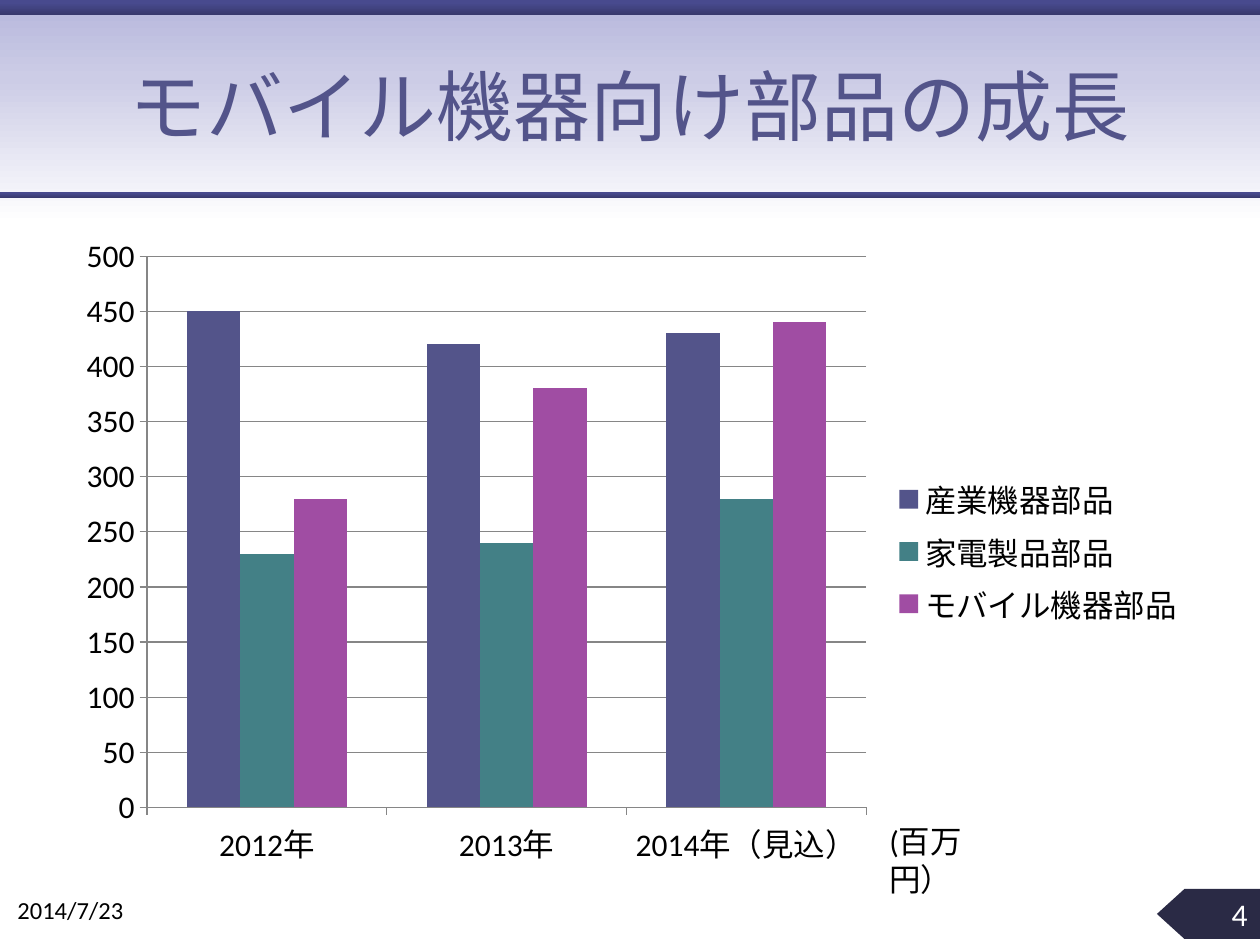
from dataclasses import dataclass

import lxml.etree
import pptx
import pptx.chart.data
import pptx.dml.color
import pptx.enum.chart
import pptx.enum.shapes
import pptx.enum.text
import pptx.oxml.ns
import pptx.util

PX_PER_INCH = 126
FONT = "Calibri"
COLORS = {
    "title": "53548A",
    "teal": "438086",
    "purple": "A04DA3",
    "tag": "2A2A45",
    "grid": "868686",
    "black": "000000",
    "white": "FFFFFF",
}
HEADER_STOPS = ((0, "B6B7DC"), (35, "CCCCE6"), (100, "FFFFFF"))
RULE_STOPS = ((0, "38396D"), (80, "484A8E"), (100, "474990"))
ALIGN = pptx.enum.text.PP_ALIGN
ANCHOR = pptx.enum.text.MSO_ANCHOR


@dataclass(frozen=True)
class Box:
    left: int
    top: int
    width: int
    height: int

    def emu(self) -> tuple:
        return tuple(px(n) for n in (self.left, self.top, self.width, self.height))


@dataclass(frozen=True)
class Band:
    box: Box
    stops: tuple
    angle: int


@dataclass(frozen=True)
class Label:
    text: str
    box: Box
    size: int
    color: str
    align: ALIGN = ALIGN.LEFT
    anchor: ANCHOR = ANCHOR.TOP
    grows: bool = False


@dataclass(frozen=True)
class Sales:
    name: str
    values: tuple
    color: str


BANDS = (
    Band(Box(0, 0, 1260, 224), HEADER_STOPS, 90),
    Band(Box(-1, 192, 1261, 6), RULE_STOPS, 270),
    Band(Box(-1, 0, 1261, 15), RULE_STOPS, 270),
)
PAGE_TAG = Box(1157, 889, 103, 50)
CHART_BOX = Box(64, 224, 1134, 655)
YEARS = ("2012年", "2013年", "2014年（見込）")
SALES = (
    Sales("産業機器部品", (450, 420, 430), "title"),
    Sales("家電製品部品", (230, 240, 280), "teal"),
    Sales("モバイル機器部品", (280, 380, 440), "purple"),
)
TITLE = Label("モバイル機器向け部品の成長", Box(63, 26, 1134, 158), 44, "title",
              ALIGN.CENTER, ANCHOR.MIDDLE)
NOTES = (
    Label("4", Box(1097, 889, 163, 50), 18, "white", ALIGN.RIGHT, ANCHOR.MIDDLE),
    Label("2014/7/23", Box(5, 889, 170, 50), 14, "black"),
    Label("(百万円）", Box(877, 816, 146, 50), 18, "black", grows=True),
)


def px(length: int) -> int:
    return round(length * pptx.util.Inches(1) / PX_PER_INCH)


def rgb(name: str) -> pptx.dml.color.RGBColor:
    return pptx.dml.color.RGBColor.from_string(COLORS[name])


def add_plain_shape(slide, kind, box: Box):
    shape = slide.shapes.add_shape(kind, *box.emu())
    shape.shadow.inherit = False
    shape.line.fill.background()
    return shape


def add_band(slide, band: Band) -> None:
    shape = add_plain_shape(slide, pptx.enum.shapes.MSO_SHAPE.RECTANGLE, band.box)
    shape.fill.gradient()
    # python-pptx measures the angle counter-clockwise
    shape.fill.gradient_angle = 360 - band.angle
    qn = pptx.oxml.ns.qn
    stop_list = shape.element.spPr.find(qn("a:gradFill")).find(qn("a:gsLst"))
    for old in list(stop_list):
        stop_list.remove(old)
    for position, color in band.stops:
        stop = lxml.etree.SubElement(stop_list, qn("a:gs"), pos=str(position * 1000))
        lxml.etree.SubElement(stop, qn("a:srgbClr"), val=color)


def add_page_tag(slide) -> None:
    tag = add_plain_shape(slide, pptx.enum.shapes.MSO_SHAPE.PENTAGON, PAGE_TAG)
    tag.adjustments[0] = 0.55
    tag.fill.solid()
    tag.fill.fore_color.rgb = rgb("tag")
    tag.element.spPr.xfrm.set("flipH", "1")


def style_font(font, size: int, color: str) -> None:
    font.name = FONT
    font.size = pptx.util.Pt(size)
    font.color.rgb = rgb(color)


def add_label(slide, label: Label) -> None:
    frame = slide.shapes.add_textbox(*label.box.emu()).text_frame
    frame.word_wrap = True
    frame.vertical_anchor = label.anchor
    if label.grows:
        frame.auto_size = pptx.enum.text.MSO_AUTO_SIZE.SHAPE_TO_FIT_TEXT
    frame.text = label.text
    paragraph = frame.paragraphs[0]
    paragraph.alignment = label.align
    style_font(paragraph.runs[0].font, label.size, label.color)


def add_sales_chart(slide) -> None:
    data = pptx.chart.data.CategoryChartData()
    data.categories = YEARS
    for sales in SALES:
        data.add_series(sales.name, sales.values)
    chart = slide.shapes.add_chart(
        pptx.enum.chart.XL_CHART_TYPE.COLUMN_CLUSTERED, *CHART_BOX.emu(), data
    ).chart
    style_font(chart.font, 18, "black")
    chart.has_title = False
    chart.has_legend = True
    chart.legend.position = pptx.enum.chart.XL_LEGEND_POSITION.RIGHT
    chart.legend.include_in_layout = False

    plot = chart.plots[0]
    plot.gap_width = 150
    plot.overlap = 0
    plot.vary_by_categories = False
    for series, sales in zip(plot.series, SALES):
        series.format.fill.solid()
        series.format.fill.fore_color.rgb = rgb(sales.color)

    amounts = chart.value_axis
    amounts.minimum_scale, amounts.maximum_scale = 0, 500
    amounts.major_unit = 50
    amounts.has_major_gridlines = True
    for axis in (chart.category_axis, amounts):
        axis.major_tick_mark = pptx.enum.chart.XL_TICK_MARK.OUTSIDE
    for part in (chart.category_axis, amounts, amounts.major_gridlines):
        part.format.line.color.rgb = rgb("grid")
        part.format.line.width = pptx.util.Pt(0.75)


def main() -> None:
    deck = pptx.Presentation()
    deck.slide_width = pptx.util.Inches(10)
    deck.slide_height = pptx.util.Inches(7.5)
    slide = deck.slides.add_slide(deck.slide_layouts[6])
    add_page_tag(slide)
    for band in BANDS:
        add_band(slide, band)
    add_label(slide, TITLE)
    add_sales_chart(slide)
    for note in NOTES:
        add_label(slide, note)
    deck.save("out.pptx")


if __name__ == "__main__":
    main()
